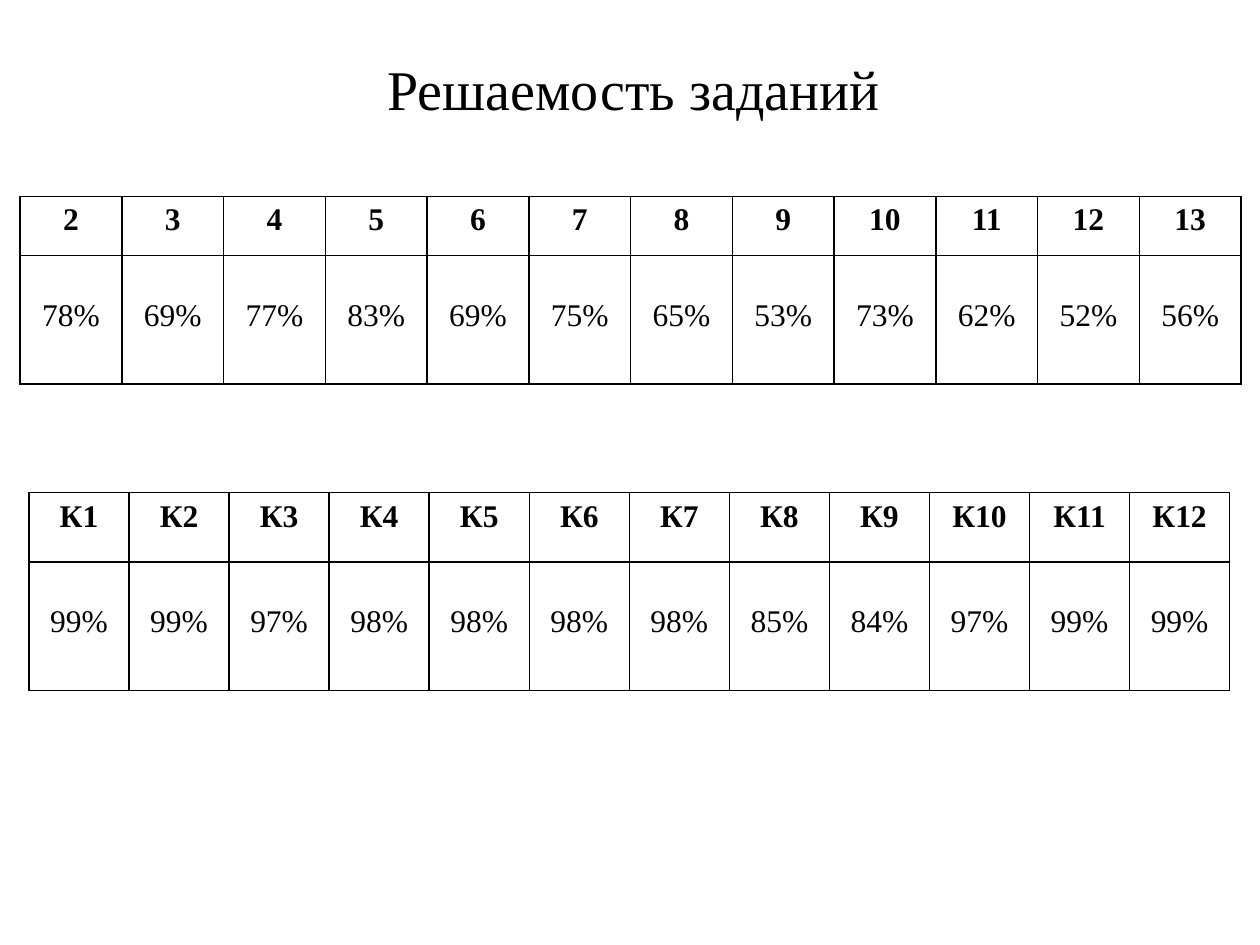
from lxml.etree import SubElement
from pptx import Presentation
from pptx.dml.color import RGBColor
from pptx.enum.text import MSO_ANCHOR as Anchor, PP_ALIGN as Align
from pptx.oxml.ns import qn
from pptx.util import Inches, Pt


def color(value):
    return RGBColor.from_string(value)


def write(frame, text, size, bold=False):
    paragraph = frame.paragraphs[0]
    paragraph.text = text
    paragraph.alignment = Align.CENTER
    font = paragraph.runs[0].font
    formats = {"name": "Times New Roman", "size": Pt(size), "bold": bold}
    for name, value in formats.items():
        setattr(font, name, value)
    font.color.rgb = color("000000")


presentation = Presentation()
presentation.slide_width = Inches(10)
presentation.slide_height = Inches(7.5)
slide = presentation.slides.add_slide(presentation.slide_layouts[6])

title = slide.shapes.add_textbox(Inches(0.78), Inches(0.31), Inches(8.5), Inches(0.78))
title.text_frame.word_wrap = True
title.text_frame.vertical_anchor = Anchor.MIDDLE
write(title.text_frame, "Решаемость заданий", 32)

tables = [
    {
        "box": (0.16, 1.56, 9.69, 1.49),
        "heights": (0.47, 1.02),
        "tasks": [str(number) for number in range(2, 14)],
        "rates": [78, 69, 77, 83, 69, 75, 65, 53, 73, 62, 52, 56],
    },
    {
        "box": (0.23, 3.91, 9.53, 1.57),
        "heights": (0.55, 1.02),
        "tasks": [f"К{number}" for number in range(1, 13)],
        "rates": [99, 99, 97, 98, 98, 98, 98, 85, 84, 97, 99, 99],
    },
]

for data in tables:
    box = [Inches(length) for length in data["box"]]
    table = slide.shapes.add_table(2, len(data["tasks"]), *box).table
    for name in ("first_row", "horz_banding"):
        setattr(table, name, False)
    for row, height in zip(table.rows, data["heights"]):
        row.height = Inches(height)
    for column, (task, rate) in enumerate(zip(data["tasks"], data["rates"])):
        for row, text in enumerate((task, f"{rate}%")):
            cell = table.cell(row, column)
            cell.margin_top = Inches((0.05, 0.34)[row])
            write(cell.text_frame, text, 18, bold=row == 0)
            properties = cell._tc.get_or_add_tcPr()
            for side in ("a:lnL", "a:lnR", "a:lnT", "a:lnB"):
                line = SubElement(properties, qn(side), w=str(Pt(1)))
                fill = SubElement(line, qn("a:solidFill"))
                SubElement(fill, qn("a:srgbClr"), val="000000")
            cell.fill.background()

presentation.save("out.pptx")
